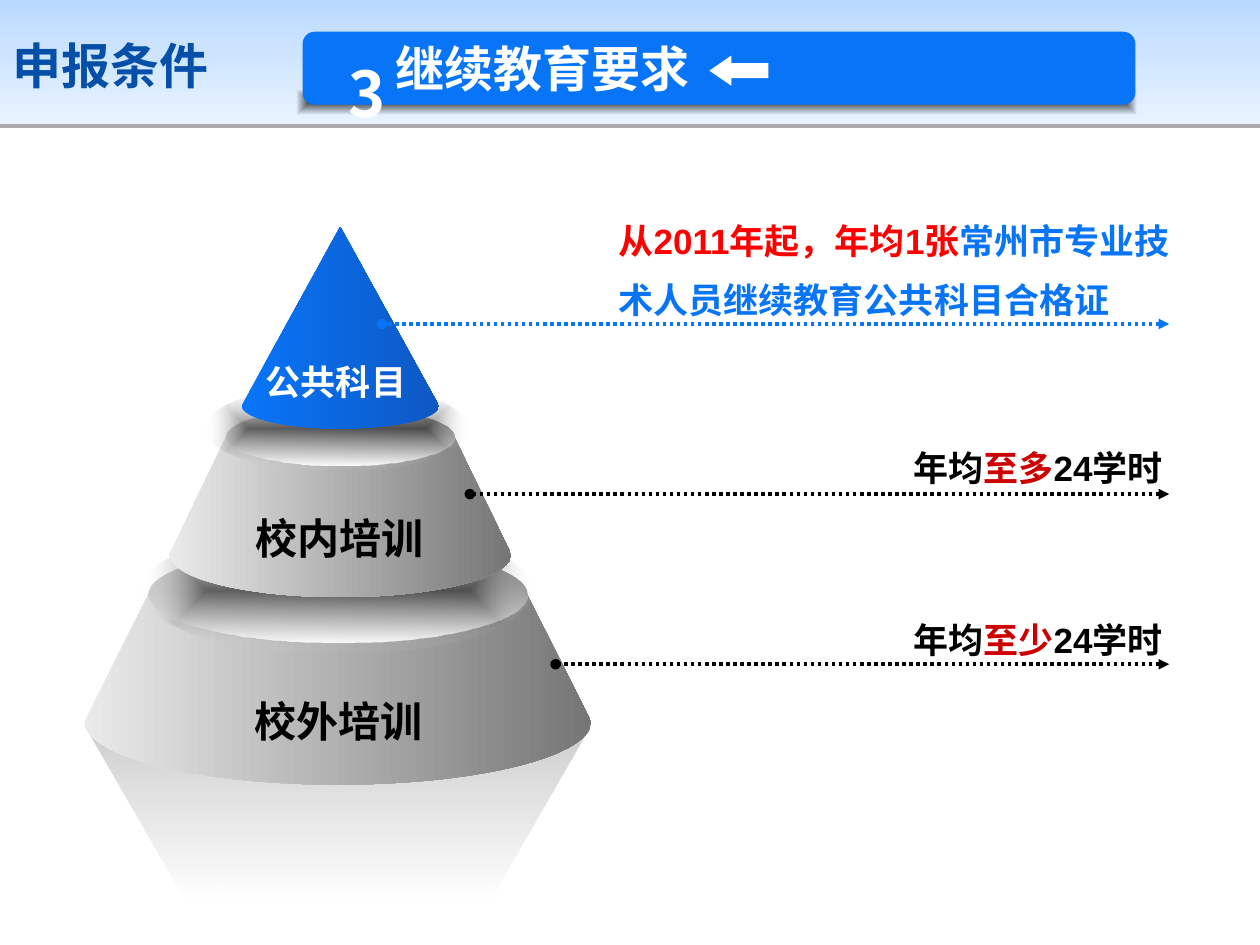
"""Build the slide on continuing education requirements."""
import math

from lxml import etree
from pptx import Presentation
from pptx import util as u
from pptx.dml import color
from pptx.enum import dml, shapes, text
from pptx.oxml import ns

BLUE, WHITE, BLACK, RED = "0875F8", "FFFFFF", "000000", "CC0000"
STEEL = [(0, "EAEAEA", 100), (100, "767676", 100)]
HOLE = [(0, "767676", 0), (100, WHITE, 100)]
GLOW = [(0, BLACK, 50), (100, WHITE, 0)]
KIND = shapes.MSO_SHAPE
ALIGN = text.PP_ALIGN
MID = text.MSO_ANCHOR.MIDDLE


def hue(code):
    """Turn a hex string into a colour."""
    return color.RGBColor.from_string(code)


def node(root, tag, **vals):
    """Add a drawing element with the given attributes."""
    return etree.SubElement(root, ns.qn("a:" + tag), {k: str(v) for k, v in vals.items()})


def tint(root, code, alpha):
    """Add a colour with an opacity in percent."""
    node(node(root, "srgbClr", val=code), "alpha", val=alpha * 1000)


class Deck:
    """Hold the style and the current slide."""

    style = {"name": "Arial", "bold": True}
    asian = "Noto Sans CJK SC"

    def __init__(self):
        """Open a blank slide."""
        self.prs = Presentation()
        self.prs.slide_width, self.prs.slide_height = u.Cm(25.4), u.Cm(19.05)
        self.page = self.prs.slides.add_slide(self.prs.slide_layouts[6])

    def paint(self, item, fill, angle=90, path=False):
        """Give a shape a plain or gradient fill and no line."""
        item.shadow.inherit = False
        item.line.fill.background()
        if isinstance(fill, str):
            item.fill.solid()
            item.fill.fore_color.rgb = hue(fill)
            return item
        item.fill.background()
        props = item._element.spPr
        grad = etree.Element(ns.qn("a:gradFill"), rotWithShape="1")
        stops = node(grad, "gsLst")
        for pos, code, alpha in fill:
            tint(node(stops, "gs", pos=pos * 1000), code, alpha)
        if path:
            way = node(grad, "path", path="shape")
            node(way, "fillToRect", l=50000, t=50000, r=50000, b=50000)
        else:
            node(grad, "lin", ang=angle * 60000, scaled=0)
        props.replace(props.find(ns.qn("a:noFill")), grad)
        return item

    def shape(self, kind, box, fill, adjust=(), path=False):
        """Add a preset shape."""
        item = self.page.shapes.add_shape(kind, *map(u.Cm, box))
        for i, val in enumerate(adjust):
            item.adjustments[i] = val
        return self.paint(item, fill, path=path)

    def drop(self, item):
        """Cast a thin shadow below a shape."""
        cast = node(item._element.spPr.find(ns.qn("a:effectLst")), "outerShdw",
                    blurRad=0, dist=u.Pt(1.6), dir=5400000, algn="t", rotWithShape=0)
        tint(cast, BLACK, 32)

    def cone(self, mid, top, base, fill, angle=0):
        """Join an upper and a lower half ellipse, each given as y, rx, ry."""
        dots = []
        for (y, wide, high), start in ((base, 0), (top, 180)):
            for turn in range(start, start + 181, 5):
                rad = math.radians(turn)
                dots.append((u.Cm(mid + wide * math.cos(rad)), u.Cm(y + high * math.sin(rad))))
        form = self.page.shapes.build_freeform(*dots[0])
        form.add_line_segments(dots[1:], close=True)
        return self.paint(form.convert_to_shape(), fill, angle)

    def tier(self, mid, top, base, glow):
        """Add a cut cone with its hollow top and a soft glow."""
        self.cone(mid, top, base, STEEL)
        self.cone(mid, top, top, HOLE, 90)
        self.shape(KIND.OVAL, glow, GLOW, path=True)

    def words(self, box, runs, size, wrap=True, font=None, para=None, **frame):
        """Add a text box of one paragraph made of coloured runs."""
        area = self.page.shapes.add_textbox(*map(u.Cm, box)).text_frame
        for key, val in {"word_wrap": wrap, **frame}.items():
            setattr(area, key, val)
        line = area.paragraphs[0]
        for key, val in (para or {}).items():
            setattr(line, key, val)
        for part, code in runs:
            run = line.add_run()
            run.text = part
            for key, val in {**self.style, "size": u.Pt(size), **(font or {})}.items():
                setattr(run.font, key, val)
            run.font.color.rgb = hue(code)
            node(run._r.get_or_add_rPr(), "ea", typeface=self.asian)

    def lead(self, left, y, code):
        """Add a dotted line from the right arrowhead to a dot on a tier."""
        item = self.page.shapes.add_connector(
            shapes.MSO_CONNECTOR.STRAIGHT, *map(u.Cm, (23.57, y, left, y)))
        item.line.color.rgb = hue(code)
        item.line.width = u.Pt(2)
        item.line.dash_style = dml.MSO_LINE.ROUND_DOT
        edge = item.line._get_or_add_ln()
        node(edge, "headEnd", type="triangle")
        node(edge, "tailEnd", type="oval")
        node(item._element.spPr, "effectLst")


def main():
    """Draw the slide and save it."""
    deck = Deck()
    noto = {"name": deck.asian}
    center = {"alignment": ALIGN.CENTER}

    band = [(0, "B7D9FF", 100), (35, "CBE3FF", 100), (100, "E8F3FF", 100)]
    deck.drop(deck.shape(KIND.RECTANGLE, (0, 0, 25.4, 2.51), band))
    deck.words((0, 0.41, 22.81, 1.8), [("申报条件", "054FA9")], 28, vertical_anchor=MID)
    shade = [(0, BLACK, 70), (100, BLACK, 0)]
    deck.shape(KIND.RECTANGLE, (5.99, 1.8, 16.92, 0.51), shade, path=True)
    deck.shape(KIND.ROUNDED_RECTANGLE, (6.1, 0.64, 16.79, 1.47), BLUE, [0.167])
    deck.shape(KIND.LEFT_ARROW, (14.3, 1.12, 1.19, 0.61), WHITE, [0.5, 0.73])
    deck.words((6.78, 0.97, 0.51, 0.79), [("3", WHITE)], 36, False, noto, center)
    deck.words((6.3, 0.64, 15.01, 1.47), [("继续教育要求", WHITE)], 28, font=noto,
               vertical_anchor=MID, margin_left=u.Cm(1.68))

    fade = [(0, BLACK, 20), (100, BLACK, 0)]
    deck.shape(KIND.FLOWCHART_MANUAL_OPERATION, (1.7, 14.63, 10.21, 3.53), fade)
    deck.tier(6.81, (11.99, 3.82, 0.97), (14.55, 5.11, 1.27), (2.87, 10.62, 7.87, 2.57))
    deck.tier(6.86, (8.81, 2.3, 0.58), (11.18, 3.45, 0.86), (4.14, 7.77, 5.31, 1.73))
    deck.cone(6.86, (4.57, 0, 0), (8.18, 1.99, 0.46), [(0, BLUE, 100), (100, "0E58C4", 100)])

    for box, name, code, size in (
        ((5.11, 7.14, 3.33, 1.09), "公共科目", WHITE, 20),
        ((4.9, 10.21, 3.89, 1.27), "校内培训", BLACK, 24),
        ((4.88, 13.89, 3.89, 1.27), "校外培训", BLACK, 24),
    ):
        deck.words(box, [(name, code)], size, False, para=center)

    deck.words((12.22, 3.96, 11.81, 3.84),
               [("从2011年起，年均1张", "FF0000"), ("常州市专业技术人员继续教育公共科目合格证", BLUE)],
               20, para={"line_spacing": 1.4})
    for y, limit in ((12.17, "至少"), (8.71, "至多")):
        deck.words((17.7, y, 5.99, 1.27), [("年均", BLACK), (limit, RED), ("24学时", BLACK)],
                   20, para={"alignment": ALIGN.RIGHT, "line_spacing": 1.2})
    for left, y, code in ((11.2, 13.39, BLACK), (7.7, 6.53, BLUE), (9.47, 9.96, BLACK)):
        deck.lead(left, y, code)

    deck.prs.save("out.pptx")


if __name__ == "__main__":
    main()
